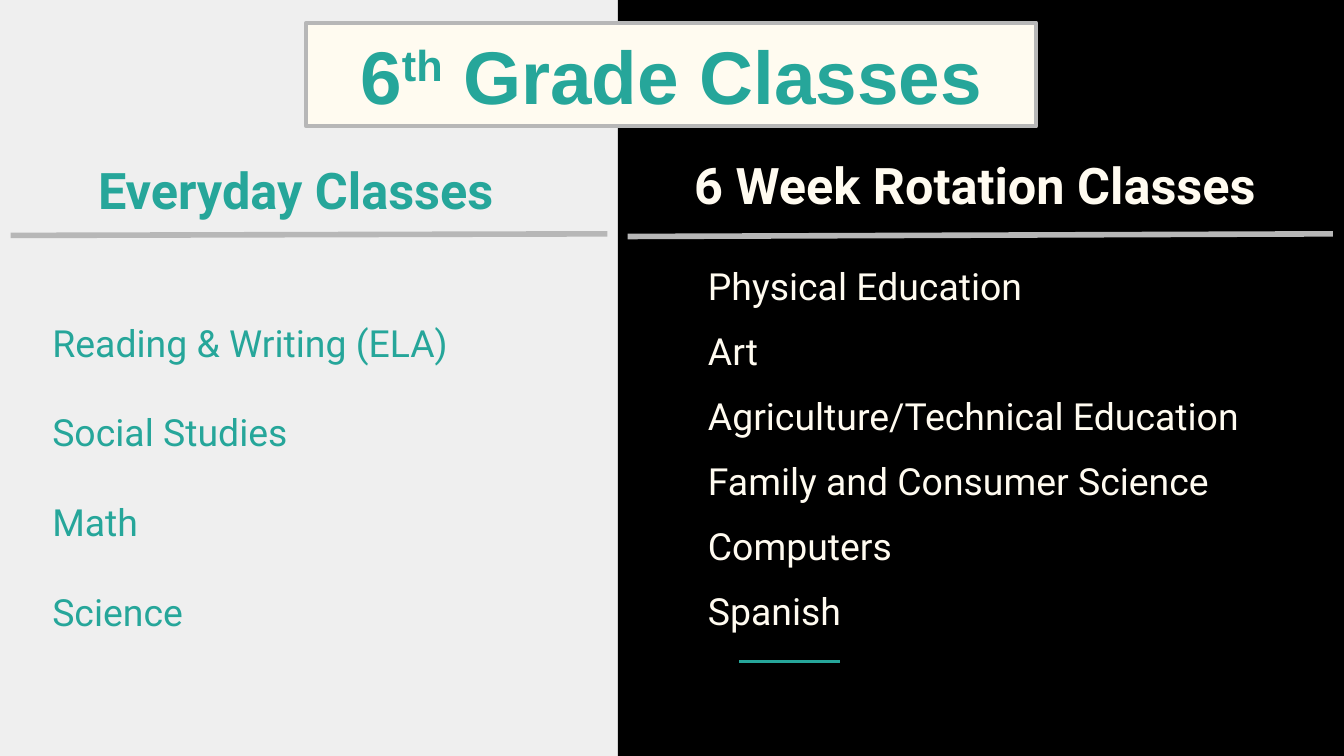
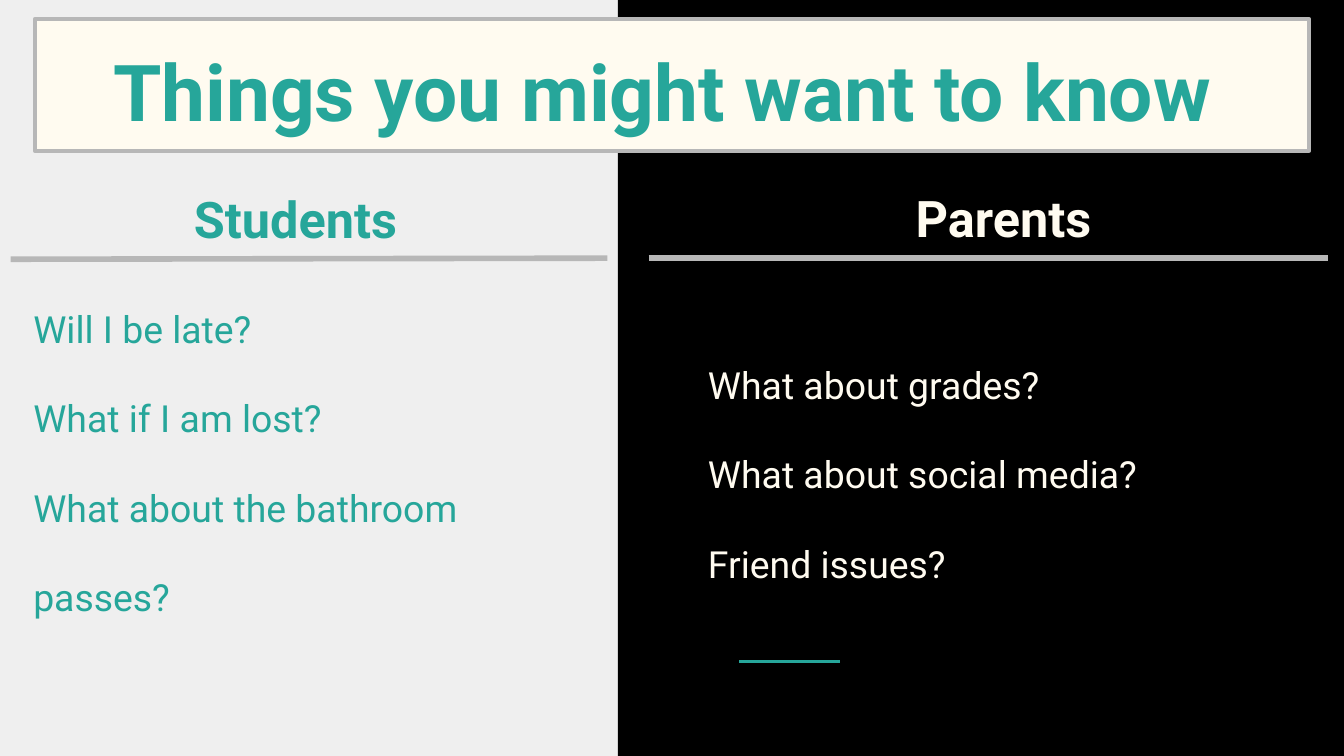
from dataclasses import dataclass

from lxml.etree import SubElement
from pptx import Presentation
from pptx.dml.color import RGBColor
from pptx.enum.shapes import MSO_CONNECTOR as Connector, MSO_SHAPE as Shape
from pptx.enum.text import MSO_ANCHOR as Anchor, PP_ALIGN as Align
from pptx.oxml.ns import qn
from pptx.util import Cm, Pt


@dataclass(frozen=True)
class Theme:
    paper: str = "EFEFEF"
    black: str = "000000"
    cream: str = "FFFBF0"
    teal: str = "26A69A"
    grey: str = "B7B7B7"
    font: str = "Roboto"
    heading_size: int = 27
    list_size: int = 20
    border: float = 2.25
    rule: float = 3
    accent: float = 1.5


@dataclass(frozen=True)
class Box:
    left: float
    top: float
    width: float
    height: float

    def inside(self, left, top, width, height):
        return Box(self.left + left, self.top + top, width, height)

    def lengths(self):
        return [Cm(side) for side in (self.left, self.top, self.width, self.height)]


THEME = Theme()
SLIDE = Box(0, 0, 25.4, 14.29)
LEFT = SLIDE.inside(0, 0, 11.68, SLIDE.height)
RIGHT = SLIDE.inside(LEFT.width, 0, SLIDE.width - LEFT.width, SLIDE.height)


def color(value):
    return RGBColor.from_string(value)


def add_rectangle(page, box, fill, line=None):
    shape = page.shapes.add_shape(Shape.RECTANGLE, *box.lengths())
    shape.shadow.inherit = False
    shape.fill.solid()
    shape.fill.fore_color.rgb = color(fill)
    if line:
        shape.line.color.rgb = color(line)
        shape.line.width = Pt(THEME.border)
    else:
        shape.line.fill.background()
    return shape


def add_line(page, box, start, end, ink, width):
    """Draw a line between two points given relative to the box."""
    ends = [Cm(value) for x, y in (start, end) for value in (box.left + x, box.top + y)]
    line = page.shapes.add_connector(Connector.STRAIGHT, *ends)
    line.line.color.rgb = color(ink)
    line.line.width = Pt(width)
    SubElement(line._element.spPr, qn("a:effectLst"))


def write(shape, paragraphs, ink, size, font=THEME.font, bold=False, align=Align.LEFT,
          anchor=Anchor.TOP, spacing=1, gap=0, inset=0.25):
    """Write paragraphs; a tuple paragraph alternates plain and raised text."""
    frame = shape.text_frame
    frame.word_wrap = True
    frame.vertical_anchor = anchor
    frame.margin_left = frame.margin_right = Cm(0.25)
    frame.margin_top = frame.margin_bottom = Cm(inset)
    for index, content in enumerate(paragraphs):
        para = frame.add_paragraph() if index else frame.paragraphs[0]
        para.alignment = align
        para.line_spacing = spacing
        para.space_before = Pt(gap if index else 0)
        pieces = content if isinstance(content, tuple) else (content,)
        for position, piece in enumerate(pieces):
            span = para.add_run()
            span.text = piece
            span.font.name = font
            span.font.size = Pt(size)
            span.font.bold = bold
            span.font.color.rgb = color(ink)
            if position % 2:
                span._r.get_or_add_rPr().set("baseline", "30000")
    para.space_after = Pt(gap)


def add_text(page, box, paragraphs, **style):
    write(page.shapes.add_textbox(*box.lengths()), paragraphs, **style)


def add_page(deck):
    """Add a page with the split background both slides share."""
    page = deck.slides.add_slide(deck.slide_layouts[6])
    page.background.fill.solid()
    page.background.fill.fore_color.rgb = color(THEME.paper)
    add_rectangle(page, RIGHT, THEME.black)
    add_line(page, RIGHT, (2.29, 12.5), (4.2, 12.5), THEME.teal, THEME.accent)
    return page


def add_title(page, box, title, **style):
    banner = add_rectangle(page, box, THEME.cream, THEME.grey)
    write(banner, [title], ink=THEME.teal, bold=True, align=Align.CENTER, **style)


def add_column(page, panel, ink, heading, heading_box, rule, items, items_box,
               heading_anchor=Anchor.TOP, **list_style):
    """Place a heading, its rule and a list relative to the panel."""
    add_line(page, panel, *rule, THEME.grey, THEME.rule)
    add_text(page, panel.inside(*heading_box), [heading], ink=ink, bold=True,
             size=THEME.heading_size, align=Align.CENTER, anchor=heading_anchor)
    add_text(page, panel.inside(*items_box), items, ink=ink,
             size=THEME.list_size, **list_style)


def build_classes(deck):
    page = add_page(deck)
    add_title(page, SLIDE.inside(5.79, 0.43, 13.79, 1.96), ("6", "th", " Grade Classes"),
              size=40, font="Arial", inset=0.13)
    # Everyday classes
    add_column(page, LEFT, THEME.teal, "Everyday Classes", (0.33, 2.67, 10.52, 1.73),
               ((0.2, 4.45), (11.48, 4.42)),
               ["Reading & Writing (ELA)", "Social Studies", "Math", "Science"],
               (0.74, 4.95, 9.7, 7.82), heading_anchor=Anchor.BOTTOM, spacing=2.0)
    # Rotation classes
    add_column(page, RIGHT, THEME.cream, "6 Week Rotation Classes", (0.51, 2.57, 12.47, 1.73),
               ((0.18, 4.47), (13.51, 4.42)),
               ["Physical Education", "Art", "Agriculture/Technical Education",
                "Family and Consumer Science", "Computers", "Spanish"],
               (1.45, 4.6, 10.67, 7.82), heading_anchor=Anchor.BOTTOM,
               anchor=Anchor.MIDDLE, spacing=0.95, gap=12)


def build_questions(deck):
    page = add_page(deck)
    add_title(page, SLIDE.inside(0.66, 0.36, 24.08, 2.49), "Things you might want to know ",
              size=42, anchor=Anchor.BOTTOM)
    # Students
    add_column(page, LEFT, THEME.teal, "Students", (2.03, 3.3, 7.11, 1.6),
               ((0.2, 4.9), (11.48, 4.88)),
               ["Will I be late?", "What if I am lost?", "What about the bathroom passes?"],
               (0.38, 5.36, 11.1, 5.92), anchor=Anchor.MIDDLE, spacing=2.0)
    # Parents
    add_column(page, RIGHT, THEME.cream, "Parents", (3.73, 3.28, 7.11, 1.6),
               ((0.58, 4.88), (13.41, 4.88)),
               ["What about grades?", "What about social media?", "Friend issues?"],
               (1.45, 5.74, 11.1, 5.66), spacing=2.0)


def main():
    deck = Presentation()
    deck.slide_width, deck.slide_height = Cm(SLIDE.width), Cm(SLIDE.height)
    build_classes(deck)
    build_questions(deck)
    deck.save("out.pptx")


if __name__ == "__main__":
    main()
